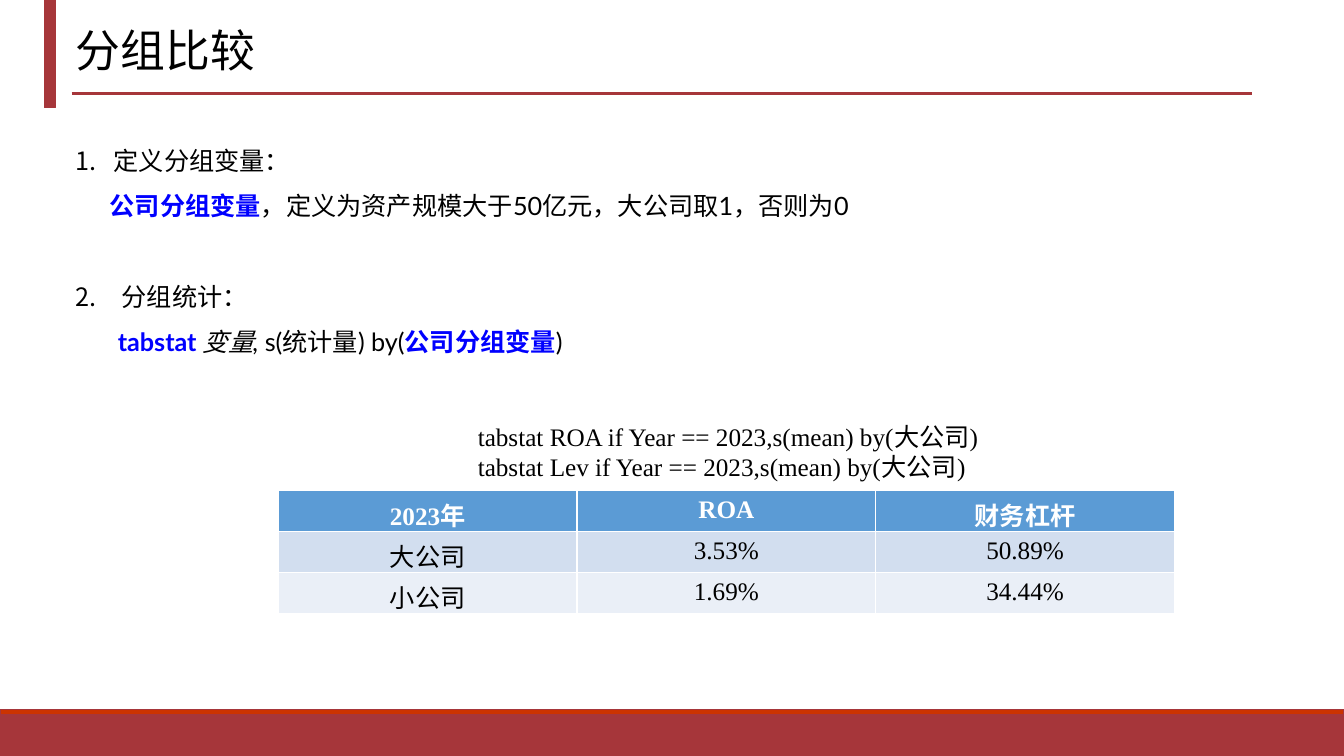
from lxml import etree
from pptx import Presentation
from pptx.dml.color import RGBColor
from pptx.enum import shapes, text
from pptx.oxml import ns
from pptx.util import Inches, Pt

RED, BLUE, BLACK, WHITE = "A6363A", "0000FF", "000000", "FFFFFF"
CJK, SANS, SERIF = "Noto Sans CJK SC", "Lato", "Times New Roman"

TITLE = "分组比较"
BARS = [
    (0, 7.09, 13.33, 0.42, RED),
    (0, 7.04, 13.33, 0.05, "CC3300"),
    (0.44, 0, 0.11, 1.07, RED),
]
STEPS = [
    dict(num=1, left=0.38, gap=0, runs=[("定义分组变量：", "")]),
    dict(num=None, left=0.34, gap=0, runs=[
        ("公司分组变量", "key"),
        ("，定义为资产规模大于50亿元，大公司取1，否则为0", "")]),
    dict(num=2, left=0.46, gap=32.5, runs=[("分组统计：", "")]),
    dict(num=None, left=0.42, gap=0, runs=[
        ("tabstat ", "key"), ("变量, ", "var"), ("s(统计量) by(", ""),
        ("公司分组变量", "key"), (")", "")]),
]
CODE = [
    "tabstat ROA if Year == 2023,s(mean) by(大公司)",
    "tabstat Lev if Year == 2023,s(mean) by(大公司)",
]
ROWS = [
    ("2023年", "ROA", "财务杠杆"),
    ("大公司", "3.53%", "50.89%"),
    ("小公司", "1.69%", "34.44%"),
]
FILLS = ["5B9BD5", "D2DEEF", "EAEFF7"]


def rgb(code):
    return RGBColor.from_string(code)


def style(font, name, size, color, bold=False):
    font.name, font.size, font.bold = name, Pt(size), bold
    font.color.rgb = rgb(color)


def number(para, left, start):
    props = para._p.get_or_add_pPr()
    props.set("marL", str(Inches(left)))
    props.set("indent", str(-Inches(left) if start else 0))
    if start:
        mark = etree.SubElement(props, ns.qn("a:buAutoNum"))
        mark.set("type", "arabicPeriod")
        mark.set("startAt", str(start))


def add_box(slide, *box):
    frame = slide.shapes.add_textbox(*map(Inches, box)).text_frame
    frame.word_wrap = True
    return frame


def add_bars(slide):
    for *box, fill in BARS:
        bar = slide.shapes.add_shape(
            shapes.MSO_SHAPE.RECTANGLE, *map(Inches, box))
        bar.shadow.inherit = False
        bar.fill.solid()
        bar.fill.fore_color.rgb = rgb(fill)
        bar.line.color.rgb = rgb(RED)
        bar.line.width = Pt(1)
    rule = slide.shapes.add_connector(
        shapes.MSO_CONNECTOR.STRAIGHT,
        *map(Inches, (0.71, 0.93, 12.42, 0.93)))
    rule.line.color.rgb = rgb(RED)
    rule.line.width = Pt(2.25)
    etree.SubElement(rule._element.spPr, ns.qn("a:effectLst"))


def add_title(slide):
    title = slide.shapes.title
    title.left, title.top, title.width, title.height = map(
        Inches, (0.65, -0.02, 11.3, 1.09))
    frame = title.text_frame
    frame.text = TITLE
    frame.vertical_anchor = text.MSO_ANCHOR.MIDDLE
    para = frame.paragraphs[0]
    para.alignment = text.PP_ALIGN.LEFT
    para.line_spacing = 0.9
    style(para.font, CJK, 32, BLACK)


def add_steps(slide):
    frame = add_box(slide, 0.65, 1.24, 11.17, 2.37)
    for i, step in enumerate(STEPS):
        para = frame.add_paragraph() if i else frame.paragraphs[0]
        para.line_spacing = 1.5
        para.space_before = Pt(step["gap"])
        number(para, step["left"], step["num"])
        for words, kind in step["runs"]:
            run = para.add_run()
            run.text = words
            key = kind == "key"
            style(run.font, SANS, 18, BLUE if key else BLACK, key)
            run.font.italic = kind == "var"


def add_code(slide):
    frame = add_box(slide, 4.64, 4.13, 6.61, 0.71)
    frame.text = "\n".join(CODE)
    for para in frame.paragraphs:
        style(para.font, SERIF, 18, BLACK)


def add_means(slide):
    table = slide.shapes.add_table(
        len(ROWS), len(ROWS[0]),
        *map(Inches, (2.76, 4.87, 8.89, 1.22))).table
    for r, row in enumerate(ROWS):
        for c, words in enumerate(row):
            cell = table.cell(r, c)
            cell.text = words
            cell.fill.solid()
            cell.fill.fore_color.rgb = rgb(FILLS[r])
            para = cell.text_frame.paragraphs[0]
            para.alignment = text.PP_ALIGN.CENTER
            head = r == 0
            style(para.font, SERIF, 18, WHITE if head else BLACK, head)


def main():
    deck = Presentation()
    deck.slide_width, deck.slide_height = Inches(13.33), Inches(7.5)
    slide = deck.slides.add_slide(deck.slide_layouts[5])
    add_bars(slide)
    add_title(slide)
    add_steps(slide)
    add_means(slide)
    add_code(slide)
    deck.save("out.pptx")


if __name__ == "__main__":
    main()
